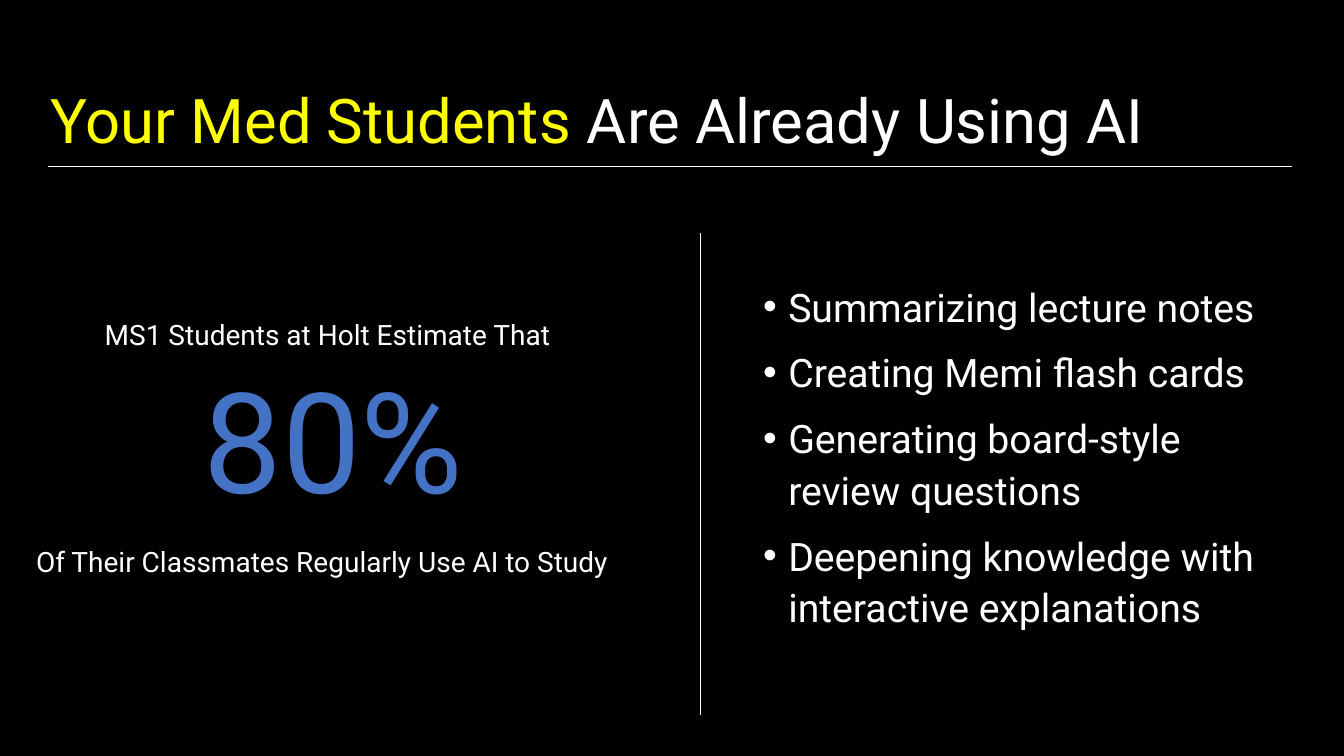
from lxml.etree import SubElement as Sub
from pptx import Presentation
from pptx.dml.color import RGBColor as RGB
from pptx.enum.shapes import MSO_CONNECTOR as Link
from pptx.enum.text import MSO_ANCHOR as Anchor, MSO_AUTO_SIZE as Fit, PP_ALIGN as Align
from pptx.oxml.ns import qn
from pptx.util import Inches, Pt

BLACK = RGB(0x00, 0x00, 0x00)
WHITE = RGB(0xFF, 0xFF, 0xFF)
YELLOW = RGB(0xFF, 0xFF, 0x00)
BLUE = RGB(0x44, 0x72, 0xC4)
FONT = "Roboto"

# Content
TITLE = [("Your Med Students ", YELLOW), ("Are Already Using AI", WHITE)]
USES = [
    "Summarizing lecture notes",
    "Creating Memi flash cards",
    "Generating board-style review questions",
    "Deepening knowledge with interactive explanations",
]

# Places in grid cells: left, top, columns, rows
COLS, ROWS = 133.33, 75
TITLE_AT = (4, 5, 124.5, 14.5)
USES_AT = (74.7, 27.1, 52.5, 41.5)
STATS = [
    ("80%", 100, BLUE, (19.2, 34.6, 32.1, 17.8)),
    ("MS1 Students at Holt Estimate That", 20, WHITE, (9.4, 31, 51.8, 4.4)),
    ("Of Their Classmates Regularly Use AI to Study", 20, WHITE, (2.6, 53.5, 65.4, 4.4)),
]
RULES = [(4.8, 16.5, 128.2, 16.5), (69.5, 23.1, 69.5, 70.9)]


def cells(spot):
    return [Inches(n / 10) for n in spot]


def add_run(para, text, size, color):
    run = para.add_run()
    run.text = text
    run.font.name = FONT
    run.font.size = Pt(size)
    run.font.color.rgb = color


def place(shape, spot):
    shape.left, shape.top, shape.width, shape.height = cells(spot)
    frame = shape.text_frame
    frame.word_wrap = True
    frame.auto_size = Fit.NONE
    return frame


def add_bullet(para):
    props = para._p.get_or_add_pPr()
    props.set("marL", str(Inches(0.25)))
    props.set("indent", str(-Inches(0.25)))
    Sub(props, qn("a:buFont")).set("typeface", "Arial")
    Sub(props, qn("a:buChar")).set("char", "•")


# Slide
deck = Presentation()
deck.slide_width, deck.slide_height = cells((COLS, ROWS))
slide = deck.slides.add_slide(deck.slide_layouts[1])
slide.background.fill.solid()
slide.background.fill.fore_color.rgb = BLACK

# Title
frame = place(slide.shapes.title, TITLE_AT)
frame.vertical_anchor = Anchor.MIDDLE
para = frame.paragraphs[0]
para.alignment = Align.LEFT
para.line_spacing = 0.9
for text, color in TITLE:
    add_run(para, text, 44, color)

# Rules
for rule in RULES:
    line = slide.shapes.add_connector(Link.STRAIGHT, *cells(rule))
    line.line.color.rgb = WHITE
    line.line.width = Pt(0.5)
    Sub(line._element.spPr, qn("a:effectLst"))

# Key figure and its captions
for text, size, color, spot in STATS:
    box = slide.shapes.add_textbox(*cells(spot))
    frame = place(box, spot)
    frame.auto_size = Fit.SHAPE_TO_FIT_TEXT
    add_run(frame.paragraphs[0], text, size, color)

# List of uses
frame = place(slide.placeholders[1], USES_AT)
frame.vertical_anchor = Anchor.TOP
for i, use in enumerate(USES):
    para = frame.add_paragraph() if i else frame.paragraphs[0]
    para.line_spacing = 1.1
    para.space_before = Pt(10)
    add_bullet(para)
    add_run(para, use, 28, WHITE)

deck.save("out.pptx")
